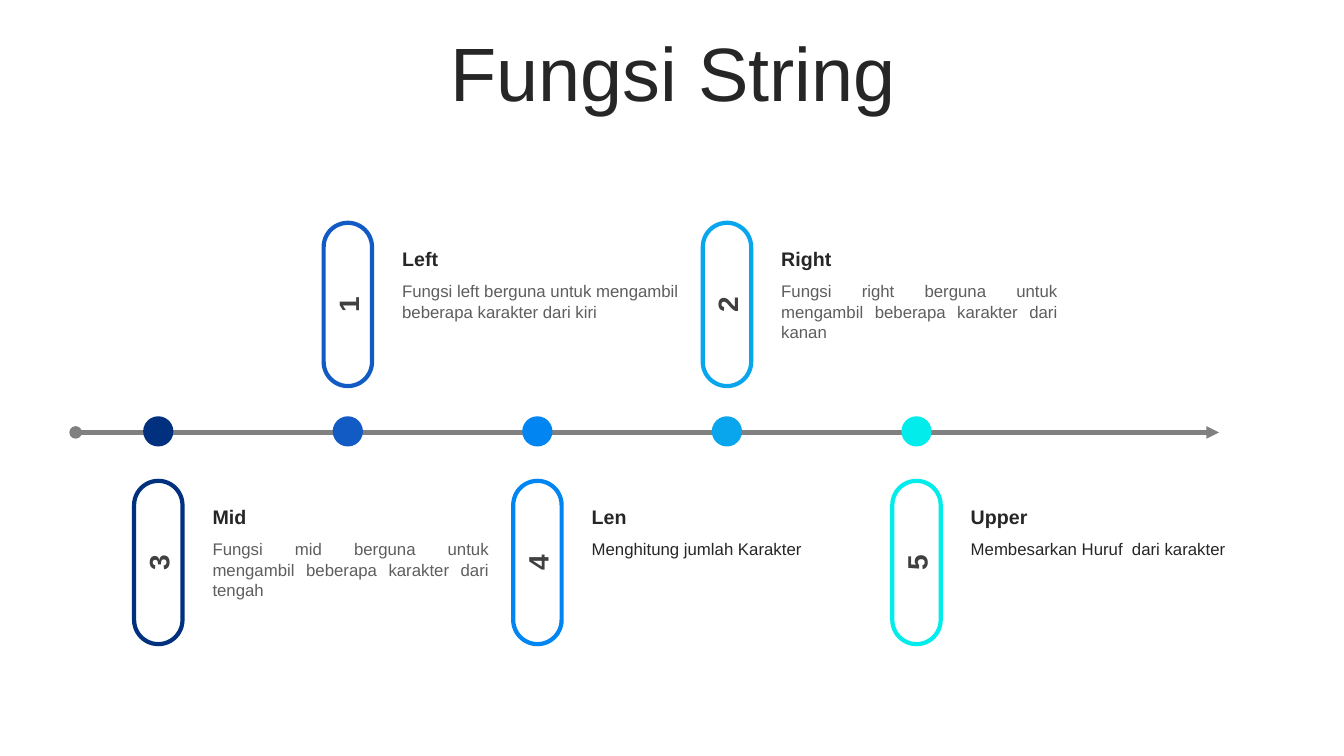
"""Build a timeline slide that explains five string functions."""
from dataclasses import dataclass
from typing import Any

from lxml import etree
from pptx import Presentation
from pptx.dml.color import RGBColor
from pptx.enum.shapes import MSO_CONNECTOR, MSO_SHAPE
from pptx.enum.text import MSO_ANCHOR, MSO_AUTO_SIZE, PP_ALIGN
from pptx.oxml.ns import qn
from pptx.util import Emu, Pt

LEFT, CENTER, JUSTIFY = PP_ALIGN.LEFT, PP_ALIGN.CENTER, PP_ALIGN.JUSTIFY
TOP, MIDDLE = MSO_ANCHOR.TOP, MSO_ANCHOR.MIDDLE
FIT_SHAPE, NO_FIT = MSO_AUTO_SIZE.SHAPE_TO_FIT_TEXT, MSO_AUTO_SIZE.NONE
OVAL, ROUNDED = MSO_SHAPE.OVAL, MSO_SHAPE.ROUNDED_RECTANGLE
STRAIGHT = MSO_CONNECTOR.STRAIGHT

EMU_PER_PX = 9144
FIRST_X, STEP_X = 157, 188
AXIS_Y, AXIS_START, AXIS_END = 429, 75, 1209
UPPER_Y, LOWER_Y = 302, 558
DOT = 30
PILL_WIDTH, PILL_HEIGHT = 162, 48
DIGIT_WIDTH, DIGIT_HEIGHT = 132, 44
TEXT_OFFSET, TEXT_WIDTH = 44, 294
INK, GRAY, WHITE = "262626", "5E5E5E", "FFFFFF"


@dataclass(frozen=True)
class Style:
    """Text format of a box."""

    size: int
    color: str
    bold: bool = False
    align: PP_ALIGN = LEFT
    anchor: MSO_ANCHOR = TOP
    fit: MSO_AUTO_SIZE = FIT_SHAPE


@dataclass(frozen=True)
class Stop:
    """One function on the timeline."""

    digit: str
    name: str
    detail: str
    color: str
    style: Style


TITLE = Style(54, INK, align=CENTER, anchor=MIDDLE, fit=NO_FIT)
DIGIT = Style(20, "404040", True, CENTER, MIDDLE)
NAME = Style(14, INK, True, anchor=MIDDLE)
DETAIL = Style(12, GRAY, align=JUSTIFY)
PLAIN_DETAIL = Style(12, INK)

STOPS = [
    Stop("3", "Mid", "Fungsi mid berguna untuk mengambil beberapa karakter dari tengah",
         "00307E", DETAIL),
    Stop("1", "Left", "Fungsi left berguna untuk mengambil beberapa karakter dari kiri",
         "125AC4", DETAIL),
    Stop("4", "Len", "Menghitung jumlah Karakter", "0085F2", PLAIN_DETAIL),
    Stop("2", "Right", "Fungsi right berguna untuk mengambil beberapa karakter dari kanan",
         "0AA6ED", DETAIL),
    Stop("5", "Upper", "Membesarkan Huruf  dari karakter", "02ECEC", PLAIN_DETAIL),
]


def px(*lengths: int) -> list[Emu]:
    """Turn pixel lengths into EMU."""
    return [Emu(length * EMU_PER_PX) for length in lengths]


def rgb(color: str) -> RGBColor:
    """Turn a hex string into a colour."""
    return RGBColor.from_string(color)


def assign(target: Any, values: dict[str, Any]) -> None:
    """Set each named attribute of the target."""
    for name, value in values.items():
        setattr(target, name, value)


def add_text(shapes: Any, text: str, style: Style, *place: int) -> Any:
    """Add a styled text box and return it."""
    box = shapes.add_textbox(*px(*place))
    assign(box.text_frame, {"word_wrap": True, "auto_size": style.fit,
                            "vertical_anchor": style.anchor})
    para = box.text_frame.paragraphs[0]
    para.alignment = style.align
    span = para.add_run()
    span.text = text
    assign(span.font, {"name": "Arial", "size": Pt(style.size), "bold": style.bold})
    span.font.color.rgb = rgb(style.color)
    return box


def add_axis(shapes: Any) -> None:
    """Draw the timeline with a round start and an arrow at its end."""
    axis = shapes.add_connector(STRAIGHT, *px(AXIS_START, AXIS_Y, AXIS_END, AXIS_Y))
    axis.line.color.rgb = rgb("808080")
    axis.line.width = Pt(3)
    line = axis.line._get_or_add_ln()
    for tag, kind in (("a:headEnd", "oval"), ("a:tailEnd", "triangle")):
        etree.SubElement(line, qn(tag), type=kind)
    etree.SubElement(axis._element.spPr, qn("a:effectLst"))


def add_dot(shapes: Any, center_x: int, color: str) -> None:
    """Draw a marker on the timeline."""
    dot = shapes.add_shape(
        OVAL, *px(center_x - DOT // 2, AXIS_Y - DOT // 2 - 1, DOT, DOT))
    dot.shadow.inherit = False
    dot.fill.solid()
    dot.fill.fore_color.rgb = rgb(color)
    dot.line.fill.background()


def add_stop(shapes: Any, stop: Stop, center_x: int, center_y: int) -> None:
    """Draw the numbered pill of a stop and its grouped texts."""
    pill = shapes.add_shape(
        ROUNDED, *px(center_x - PILL_WIDTH // 2, center_y - PILL_HEIGHT // 2,
                     PILL_WIDTH, PILL_HEIGHT))
    pill.shadow.inherit = False
    pill.adjustments[0] = 0.5
    pill.fill.solid()
    pill.fill.fore_color.rgb = rgb(WHITE)
    pill.line.color.rgb = rgb(stop.color)
    pill.line.width = Pt(3)
    digit = add_text(shapes, stop.digit, DIGIT, center_x - DIGIT_WIDTH // 2,
                     center_y - DIGIT_HEIGHT // 2, DIGIT_WIDTH, DIGIT_HEIGHT)
    pill.rotation = digit.rotation = 270
    texts = shapes.add_group_shape().shapes
    text_x = center_x + TEXT_OFFSET
    detail_height = 50 if stop.style is DETAIL else 30
    add_text(texts, stop.detail, stop.style, text_x, center_y - 28,
             TEXT_WIDTH, detail_height)
    add_text(texts, stop.name, NAME, text_x, center_y - 62, TEXT_WIDTH, 34)


def main() -> None:
    """Build and save the deck."""
    deck = Presentation()
    deck.slide_width, deck.slide_height = px(1333, 750)
    page = deck.slides.add_slide(deck.slide_layouts[6])
    title = add_text(page.shapes, "Fungsi String", TITLE, 35, 37, 1266, 79)
    assign(title.text_frame.paragraphs[0], {"line_spacing": 0.9, "space_before": Pt(10)})
    add_axis(page.shapes)
    for index, stop in enumerate(STOPS):
        center_x = FIRST_X + index * STEP_X
        add_dot(page.shapes, center_x, stop.color)
        add_stop(page.shapes, stop, center_x, UPPER_Y if index % 2 else LOWER_Y)
    deck.save("out.pptx")


if __name__ == "__main__":
    main()
